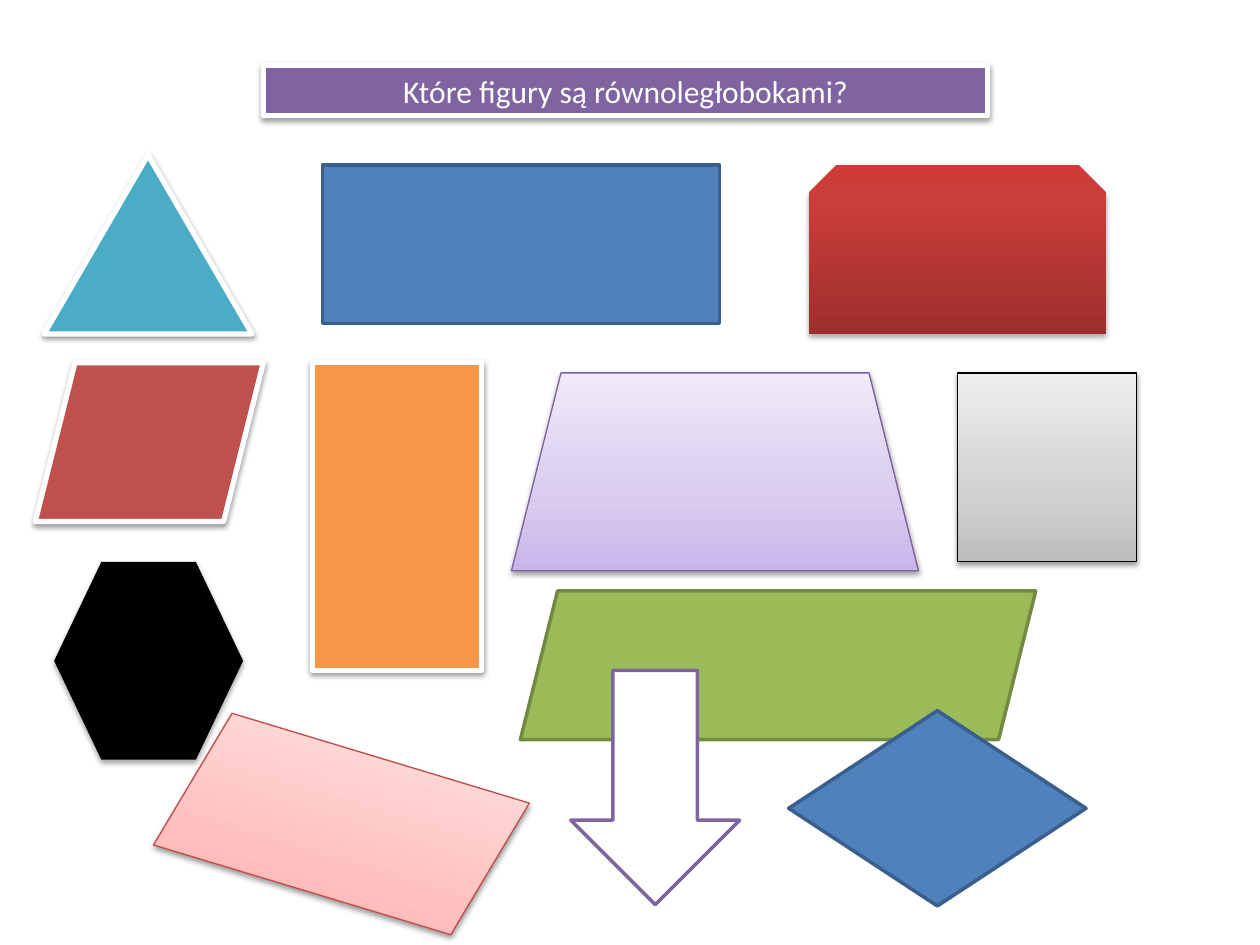
from lxml.etree import SubElement
from pptx import Presentation
from pptx.dml.color import RGBColor
from pptx.enum.shapes import MSO_SHAPE
from pptx.enum.text import MSO_ANCHOR, MSO_AUTO_SIZE, PP_ALIGN
from pptx.oxml.ns import qn
from pptx.util import Inches, Pt

WHITE = ("FFFFFF", 3)
SOFT = (38, 1.6)
DEEP = (35, 1.8)


def color(code):
    return RGBColor.from_string(code)


def tint(node, code):
    return SubElement(node, qn("a:srgbClr"), val=code)


def blend(shape, stops):
    shape.fill.gradient()
    shape.fill.gradient_angle = 90
    items = shape._element.spPr.find(qn("a:gradFill")).find(qn("a:gsLst"))
    for item in list(items):
        items.remove(item)
    for place, code in stops:
        tint(SubElement(items, qn("a:gs"), pos=str(place * 1000)), code)


def shade(shape, alpha, gap):
    effect = shape._element.spPr.find(qn("a:effectLst"))
    outer = SubElement(effect, qn("a:outerShdw"), blurRad=str(Pt(3.1)),
                       dist=str(Pt(gap)), dir="5400000", rotWithShape="0")
    SubElement(tint(outer, "000000"), qn("a:alpha"), val=str(alpha * 1000))


def figure(slide, kind, box, fill, line=None, shadow=None, turn=0):
    shape = slide.shapes.add_shape(kind, *map(Inches, box))
    shape.rotation = turn
    if isinstance(fill, str):
        shape.fill.solid()
        shape.fill.fore_color.rgb = color(fill)
    else:
        blend(shape, fill)
    if line:
        shape.line.color.rgb = color(line[0])
        shape.line.width = Pt(line[1])
    else:
        shape.line.fill.background()
    shape.shadow.inherit = False
    if shadow:
        shade(shape, *shadow)
    return shape


def write(shape, text, size=18, font="Calibri", code="FFFFFF", align=PP_ALIGN.CENTER):
    frame = shape.text_frame
    frame.word_wrap = True
    frame.auto_size = MSO_AUTO_SIZE.SHAPE_TO_FIT_TEXT
    frame.vertical_anchor = MSO_ANCHOR.MIDDLE
    para = frame.paragraphs[0]
    para.alignment = align
    run = para.add_run()
    run.text = text
    run.font.size = Pt(size)
    run.font.name = font
    run.font.color.rgb = color(code)


def main():
    deck = Presentation()
    deck.slide_width, deck.slide_height = Inches(10), Inches(7.5)
    slide = deck.slides.add_slide(deck.slide_layouts[6])

    title = figure(slide, MSO_SHAPE.RECTANGLE, (2.09, 0.52, 5.75, 0.4),
                   "8064A2", WHITE, SOFT)
    write(title, "Które figury są równoległobokami?")

    lilac = [(0, "C9B5E8"), (35, "D8CBEE"), (100, "F0EAF9")]
    red = [(0, "9C2F2D"), (80, "CB3E3A"), (100, "CE3B37")]
    pink = [(0, "FFA6A5"), (35, "FFC0BF"), (100, "FFE7E7")]
    gray = [(0, "BDBDBD"), (35, "D1D1D1"), (100, "EEEEEE")]
    navy = ("3A5F8C", 2)
    figures = [
        (MSO_SHAPE.ISOSCELES_TRIANGLE, (0.35, 1.23, 1.65, 1.42), "4BACC6", WHITE, SOFT),
        (MSO_SHAPE.RECTANGLE, (2.56, 1.31, 3.15, 1.26), "4F81BD", navy),
        (MSO_SHAPE.PARALLELOGRAM, (0.28, 2.88, 1.81, 1.26), "C0504D", WHITE, SOFT),
        (MSO_SHAPE.RECTANGLE, (2.48, 2.88, 1.34, 2.44), "F79646", WHITE, SOFT),
        (MSO_SHAPE.TRAPEZOID, (4.06, 2.96, 3.23, 1.57), lilac, ("7D60A0", 0.75), SOFT),
        (MSO_SHAPE.SNIP_2_SAME_RECTANGLE, (6.42, 1.31, 2.36, 1.34), red, None, DEEP),
        (MSO_SHAPE.PARALLELOGRAM, (4.13, 4.69, 4.09, 1.18), "9BBB59", ("738A42", 2)),
        (MSO_SHAPE.PARALLELOGRAM, (1.33, 5.95, 2.76, 1.18), pink, ("BF4C48", 0.75), SOFT, 16.8),
        (MSO_SHAPE.HEXAGON, (0.43, 4.46, 1.5, 1.57), "000000", None, DEEP),
        (MSO_SHAPE.RECTANGLE, (7.6, 2.96, 1.42, 1.5), gray, ("000000", 0.75), SOFT),
        (MSO_SHAPE.DIAMOND, (6.26, 5.64, 2.36, 1.55), "4F81BD", navy),
        (MSO_SHAPE.DOWN_ARROW, (4.53, 5.32, 1.34, 1.86), "FFFFFF", ("8064A2", 2)),
    ]
    for item in figures:
        figure(slide, *item)
    deck.save("out.pptx")


if __name__ == "__main__":
    main()
